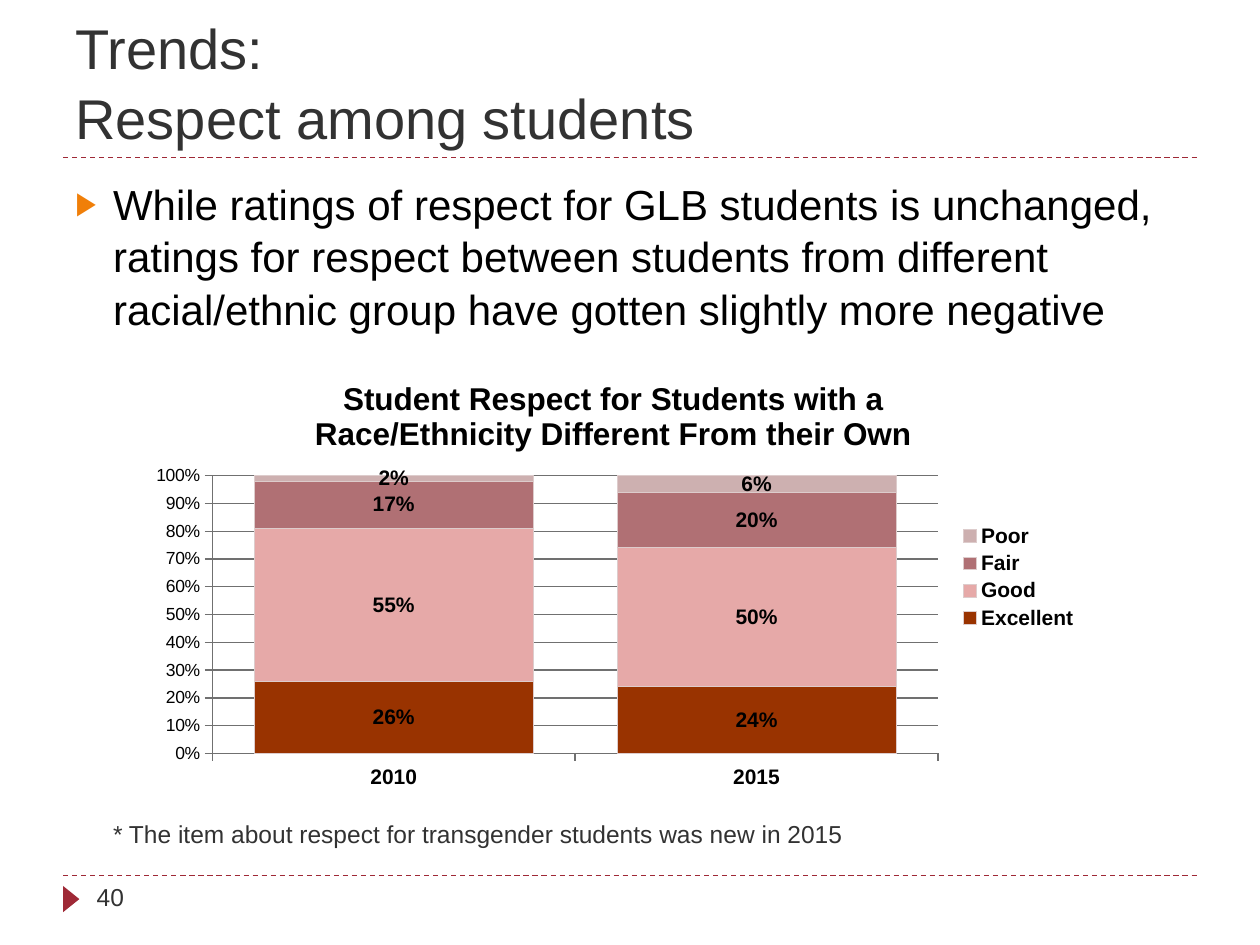
from lxml import etree
from pptx import Presentation
from pptx import util as u
from pptx.chart.data import CategoryChartData
from pptx.dml.color import RGBColor
from pptx.enum import chart as ch, dml, shapes, text
from pptx.oxml.ns import qn

BLACK = RGBColor(0x00, 0x00, 0x00)
DARK = RGBColor(0x32, 0x32, 0x32)
RED = RGBColor(0x9F, 0x29, 0x36)
GRID = RGBColor(0x70, 0x70, 0x70)
EDGE = RGBColor(0xDD, 0xCC, 0xCC)
RUST = RGBColor(0x99, 0x33, 0x00)
PINK = RGBColor(0xE6, 0xA9, 0xA8)
ROSE = RGBColor(0xB0, 0x70, 0x74)
PALE = RGBColor(0xCD, 0xB0, 0xB0)
FONT = "Arial"
LEFT, WIDE = 1.27, 22.86

SERIES = [
    ("Excellent", (0.26, 0.24), RUST),
    ("Good", (0.55, 0.50), PINK),
    ("Fair", (0.17, 0.20), ROSE),
    ("Poor", (0.02, 0.06), PALE),
]


def style(font, size, color=BLACK, bold=False):
    font.name = FONT
    font.size = u.Pt(size)
    font.bold = bold
    font.color.rgb = color


def add_text(slide, box, lines, size, color, anchor=text.MSO_ANCHOR.TOP, space=1.0):
    frame = slide.shapes.add_textbox(*map(u.Cm, box)).text_frame
    frame.word_wrap = True
    frame.vertical_anchor = anchor
    para = frame.paragraphs[0]
    para.line_spacing = space
    for i, line in enumerate(lines):
        if i:
            para.add_line_break()
        run = para.add_run()
        run.text = line
        style(run.font, size, color)
    return para


def add_bullet(para):
    props = para._p.get_or_add_pPr()
    indent = u.Cm(0.76)
    props.set("marL", str(indent))
    props.set("indent", str(-indent))
    color = etree.SubElement(props, qn("a:buClr"))
    etree.SubElement(color, qn("a:srgbClr"), val="F07F09")
    etree.SubElement(props, qn("a:buSzPct"), val="76000")
    etree.SubElement(props, qn("a:buFont"), typeface=FONT)
    etree.SubElement(props, qn("a:buChar"), char="▶")


def add_rule(slide, top):
    rule = slide.shapes.add_connector(
        shapes.MSO_CONNECTOR.STRAIGHT,
        u.Cm(LEFT), u.Cm(top), u.Cm(LEFT + WIDE), u.Cm(top))
    rule.line.color.rgb = RED
    rule.line.width = u.Pt(0.75)
    rule.line.dash_style = dml.MSO_LINE.DASH
    etree.SubElement(rule._element.spPr, qn("a:effectLst"))


def add_marker(slide):
    mark = slide.shapes.add_shape(
        shapes.MSO_SHAPE.ISOSCELES_TRIANGLE,
        u.Cm(1.17), u.Cm(17.96), u.Cm(0.53), u.Cm(0.33))
    mark.rotation = 90
    mark.shadow.inherit = False
    mark.fill.solid()
    mark.fill.fore_color.rgb = RED
    mark.line.fill.background()


def set_plot(chart, **place):
    area = chart._chartSpace.chart.plotArea
    old = area.find(qn("c:layout"))
    if old is not None:
        area.remove(old)
    layout = etree.Element(qn("c:layout"))
    area.insert(0, layout)
    manual = etree.SubElement(layout, qn("c:manualLayout"))
    parts = dict(layoutTarget="inner", xMode="edge", yMode="edge", **place)
    for name, val in parts.items():
        etree.SubElement(manual, qn("c:" + name), val=str(val))


def set_axes(chart):
    cat, val = chart.category_axis, chart.value_axis
    style(cat.tick_labels.font, 12, bold=True)
    style(val.tick_labels.font, 10)
    val.minimum_scale, val.maximum_scale, val.major_unit = 0, 1, 0.1
    val.tick_labels.number_format = "0%"
    val.tick_labels.number_format_is_linked = False
    val.has_major_gridlines = True
    for axis in (cat, val):
        axis.major_tick_mark = ch.XL_TICK_MARK.OUTSIDE
    for line in (cat.format.line, val.format.line, val.major_gridlines.format.line):
        line.color.rgb = GRID
        line.width = u.Pt(0.75)


def add_bars(slide):
    data = CategoryChartData(number_format="0%")
    data.categories = ["2010", "2015"]
    for name, vals, _ in SERIES:
        data.add_series(name, vals)
    chart = slide.shapes.add_chart(
        ch.XL_CHART_TYPE.COLUMN_STACKED,
        u.Cm(2.74), u.Cm(7.19), u.Cm(19.25), u.Cm(8.89), data).chart
    style(chart.font, 10)
    chart.has_title = True
    run = chart.chart_title.text_frame.paragraphs[0].add_run()
    run.text = "Student Respect for Students with a Race/Ethnicity Different From their Own"
    style(run.font, 18, bold=True)
    chart.chart_title.include_in_layout = False
    chart.has_legend = True
    chart.legend.position = ch.XL_LEGEND_POSITION.RIGHT
    chart.legend.include_in_layout = False
    style(chart.legend.font, 12, bold=True)
    set_axes(chart)
    plot = chart.plots[0]
    plot.gap_width, plot.overlap = 30, 100
    plot.vary_by_categories = False
    for series, (_, _, color) in zip(plot.series, SERIES):
        series.format.fill.solid()
        series.format.fill.fore_color.rgb = color
        series.format.line.color.rgb = EDGE
        series.format.line.width = u.Pt(0.5)
        labels = series.data_labels
        labels.show_value = True
        labels.number_format = "0%"
        labels.number_format_is_linked = False
        labels.position = ch.XL_LABEL_POSITION.CENTER
        style(labels.font, 12, bold=True)
    set_plot(chart, x=0.08, y=0.27, w=0.76, h=0.63)


def main():
    deck = Presentation()
    deck.slide_width, deck.slide_height = u.Cm(25.4), u.Cm(19.05)
    slide = deck.slides.add_slide(deck.slide_layouts[6])
    for top in (17.65, 3.17):
        add_rule(slide, top)
    add_marker(slide)
    add_text(slide, (LEFT, 0.43, WIDE, 2.74),
             ["Trends:", "Respect among students"],
             32, DARK, text.MSO_ANCHOR.BOTTOM, 1.04)
    body = add_text(
        slide, (LEFT, 3.43, WIDE, 3.6),
        ["While ratings of respect for GLB students is unchanged, ratings for "
         "respect between students from different racial/ethnic group have "
         "gotten slightly more negative"],
        24, BLACK, space=1.04)
    add_bullet(body)
    add_text(slide, (2.03, 16.38, 22.1, 1.02),
             ["* The item about respect for transgender students was new in 2015"],
             14, DARK)
    add_text(slide, (1.7, 17.65, 5.51, 1.02), ["40"], 14, DARK)
    add_bars(slide)
    deck.save("out.pptx")


if __name__ == "__main__":
    main()
